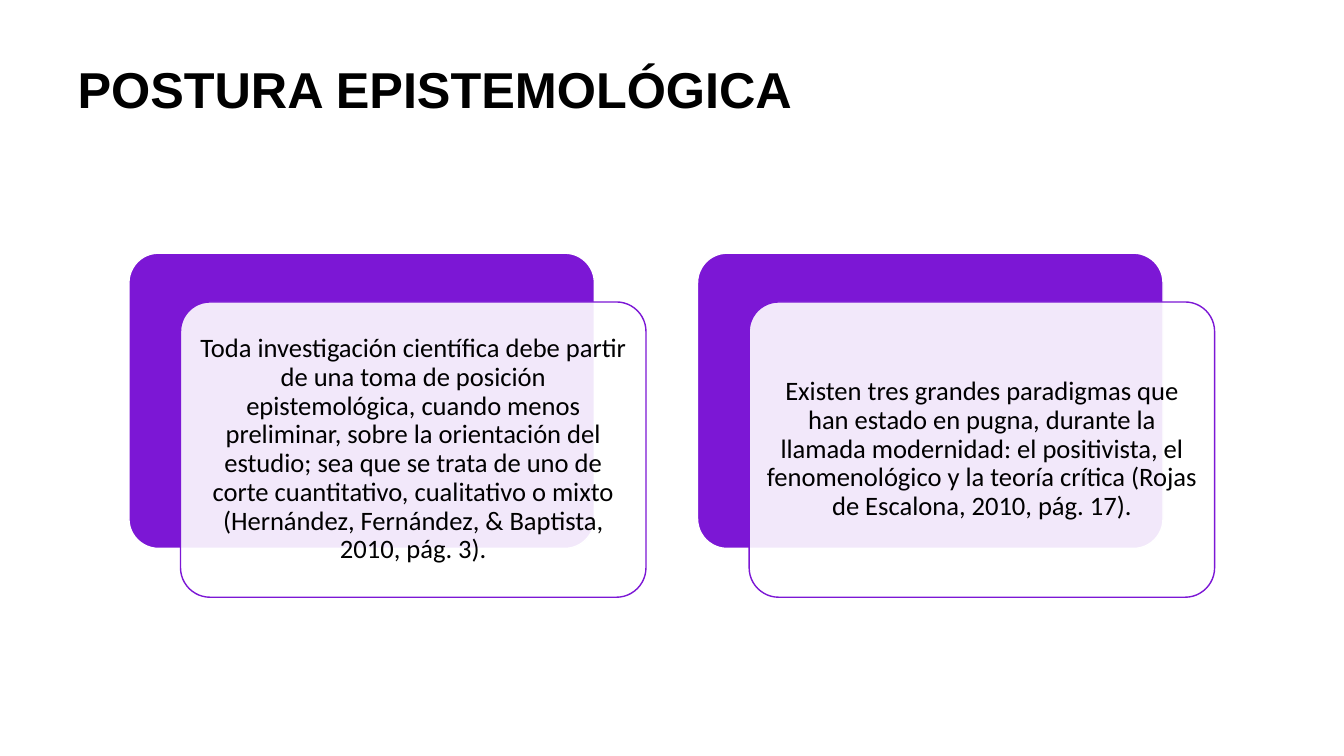
from lxml.etree import SubElement
from pptx import Presentation
from pptx.dml.color import RGBColor
from pptx.enum.shapes import MSO_SHAPE as Shape
from pptx.enum.text import MSO_ANCHOR as Anchor, PP_ALIGN as Align
from pptx.oxml.ns import qn
from pptx.util import Cm, Pt

PURPLE = RGBColor(0x7C, 0x17, 0xD5)
WHITE = RGBColor(0xFF, 0xFF, 0xFF)
BLACK = RGBColor(0, 0, 0)

TITLE = "POSTURA EPISTEMOLÓGICA"
STATEMENTS = [
    "Toda investigación científica debe partir de una toma de posición "
    "epistemológica, cuando menos preliminar, sobre la orientación del estudio; "
    "sea que se trata de uno de corte cuantitativo, cualitativo o mixto "
    "(Hernández, Fernández, & Baptista, 2010, pág. 3).",
    "Existen tres grandes paradigmas que han estado en pugna, durante la llamada "
    "modernidad: el positivista, el fenomenológico y la teoría crítica "
    "(Rojas de Escalona, 2010, pág. 17).",
]
FIRST_LEFT, TOP, PITCH = 3.25, 6.38, 14.33
CARD_WIDTH, CARD_HEIGHT = 11.73, 7.44
SHIFT_X, SHIFT_Y = 1.3, 1.23


def write_text(frame, text, font_name, size, align, bold=False):
    """Fill a text frame with one black paragraph."""
    frame.word_wrap = True
    para = frame.paragraphs[0]
    para.text = text
    para.alignment = align
    para.line_spacing = 0.9
    para.font.name = font_name
    para.font.size = Pt(size)
    para.font.bold = bold
    para.font.color.rgb = BLACK


def set_title(page):
    """Place and format the title placeholder."""
    title = page.shapes.title
    title.left, title.top = Cm(1.7), Cm(1.52)
    title.width, title.height = Cm(29.59), Cm(3.15)
    title.text_frame.vertical_anchor = Anchor.TOP
    write_text(title.text_frame, TITLE, "Arial", 36, Align.LEFT, bold=True)


def add_card(page, left, top, fill, line):
    """Add a rounded card and return it."""
    card = page.shapes.add_shape(
        Shape.ROUNDED_RECTANGLE, Cm(left), Cm(top), Cm(CARD_WIDTH), Cm(CARD_HEIGHT)
    )
    card.adjustments[0] = 0.1
    card.shadow.inherit = False
    card.fill.solid()
    card.fill.fore_color.rgb = fill
    card.line.color.rgb = line
    card.line.width = Pt(1)
    return card


def set_opacity(shape, percent):
    """Make the solid fill of a shape partly transparent."""
    color = shape.fill._xPr.find(qn("a:solidFill")).find(qn("a:srgbClr"))
    SubElement(color, qn("a:alpha")).set("val", str(percent * 1000))


def add_statement(page, left, text):
    """Add a purple card with a shifted translucent card that holds the text."""
    add_card(page, left, TOP, PURPLE, WHITE)
    front = add_card(page, left + SHIFT_X, TOP + SHIFT_Y, WHITE, PURPLE)
    set_opacity(front, 90)
    frame = front.text_frame
    frame.margin_left = frame.margin_right = Cm(0.2)
    frame.margin_top = frame.margin_bottom = Cm(0.2)
    frame.vertical_anchor = Anchor.MIDDLE
    write_text(frame, text, "Calibri", 19, Align.CENTER)


def main():
    """Build the slide and save it."""
    deck = Presentation()
    deck.slide_width, deck.slide_height = Cm(33.87), Cm(19.05)
    page = deck.slides.add_slide(deck.slide_layouts.get_by_name("Title Only"))
    set_title(page)
    for index, text in enumerate(STATEMENTS):
        add_statement(page, FIRST_LEFT + index * PITCH, text)
    deck.save("out.pptx")


if __name__ == "__main__":
    main()
